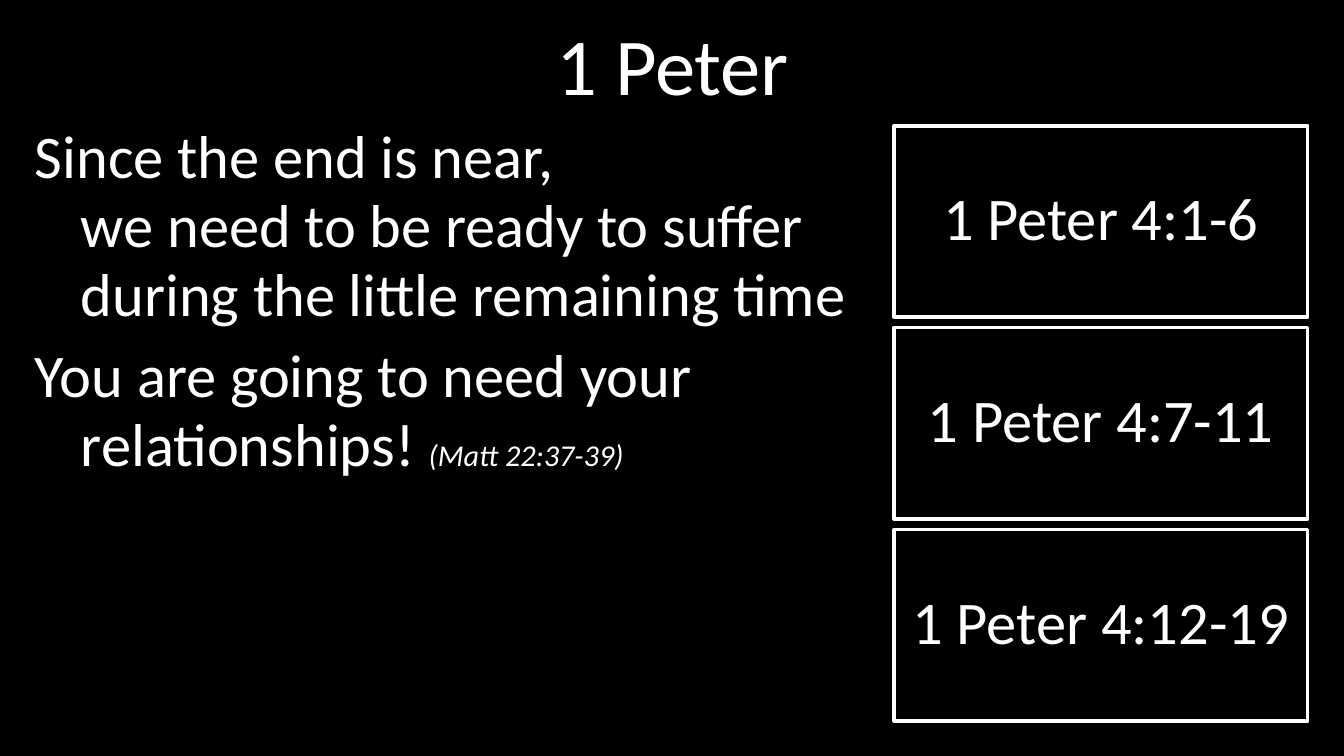
from pptx import Presentation
from pptx.dml.color import RGBColor
from pptx.enum.shapes import MSO_SHAPE
from pptx.enum.text import MSO_ANCHOR, PP_ALIGN
from pptx.util import Inches, Pt

BLACK = RGBColor(0, 0, 0)
WHITE = RGBColor(255, 255, 255)
MARGIN = Inches(0.19)
CONTENT_WIDTH = Inches(10.74)
HANGING = Inches(0.38)
PASSAGE_LEFT, PASSAGE_TOP = Inches(7.39), Inches(1.04)
PASSAGE_WIDTH, PASSAGE_HEIGHT = Inches(3.42), Inches(1.58)
PASSAGE_PITCH = Inches(1.67)


def set_font(font, size):
    font.name = "Calibri"
    font.size = Pt(size)
    font.color.rgb = WHITE


presentation = Presentation()
presentation.slide_width = Inches(11.11)
presentation.slide_height = Inches(6.25)
slide = presentation.slides.add_slide(presentation.slide_layouts[6])
slide.background.fill.solid()
slide.background.fill.fore_color.rgb = BLACK

heading = slide.shapes.add_textbox(MARGIN, Inches(0.14), CONTENT_WIDTH, Inches(0.76)).text_frame
heading.word_wrap = True
heading.vertical_anchor = MSO_ANCHOR.MIDDLE
heading.text = "1 Peter"
heading.paragraphs[0].alignment = PP_ALIGN.CENTER
set_font(heading.paragraphs[0].font, 48)

message = slide.shapes.add_textbox(MARGIN, Inches(0.97), CONTENT_WIDTH, Inches(5.07)).text_frame
message.word_wrap = True
message.text = (
    "Since the end is near, \vwe need to be ready to suffer\vduring the little remaining time\n"
    "You are going to need your\vrelationships! "
)
for point in message.paragraphs:
    point.line_spacing = 0.95
    point.space_before = Pt(7.2)
    set_font(point.font, 36)
    properties = point._p.get_or_add_pPr()
    properties.set("marL", str(HANGING))
    properties.set("indent", str(-HANGING))

citation = message.paragraphs[-1].add_run()
citation.text = "(Matt 22:37-39)"
citation.font.size = Pt(18)
citation.font.italic = True

for row, reference in enumerate(["1 Peter 4:1-6", "1 Peter 4:7-11", "1 Peter 4:12-19"]):
    passage = slide.shapes.add_shape(
        MSO_SHAPE.ROUNDED_RECTANGLE,
        PASSAGE_LEFT, PASSAGE_TOP + row * PASSAGE_PITCH, PASSAGE_WIDTH, PASSAGE_HEIGHT,
    )
    passage.adjustments[0] = 0
    passage.shadow.inherit = False
    passage.fill.solid()
    passage.fill.fore_color.rgb = BLACK
    passage.line.color.rgb = WHITE
    passage.line.width = Pt(2)
    passage.text_frame.vertical_anchor = MSO_ANCHOR.MIDDLE
    passage.text_frame.text = reference
    label = passage.text_frame.paragraphs[0]
    label.alignment = PP_ALIGN.CENTER
    label.line_spacing = 0.9
    set_font(label.font, 36)

presentation.save("out.pptx")
